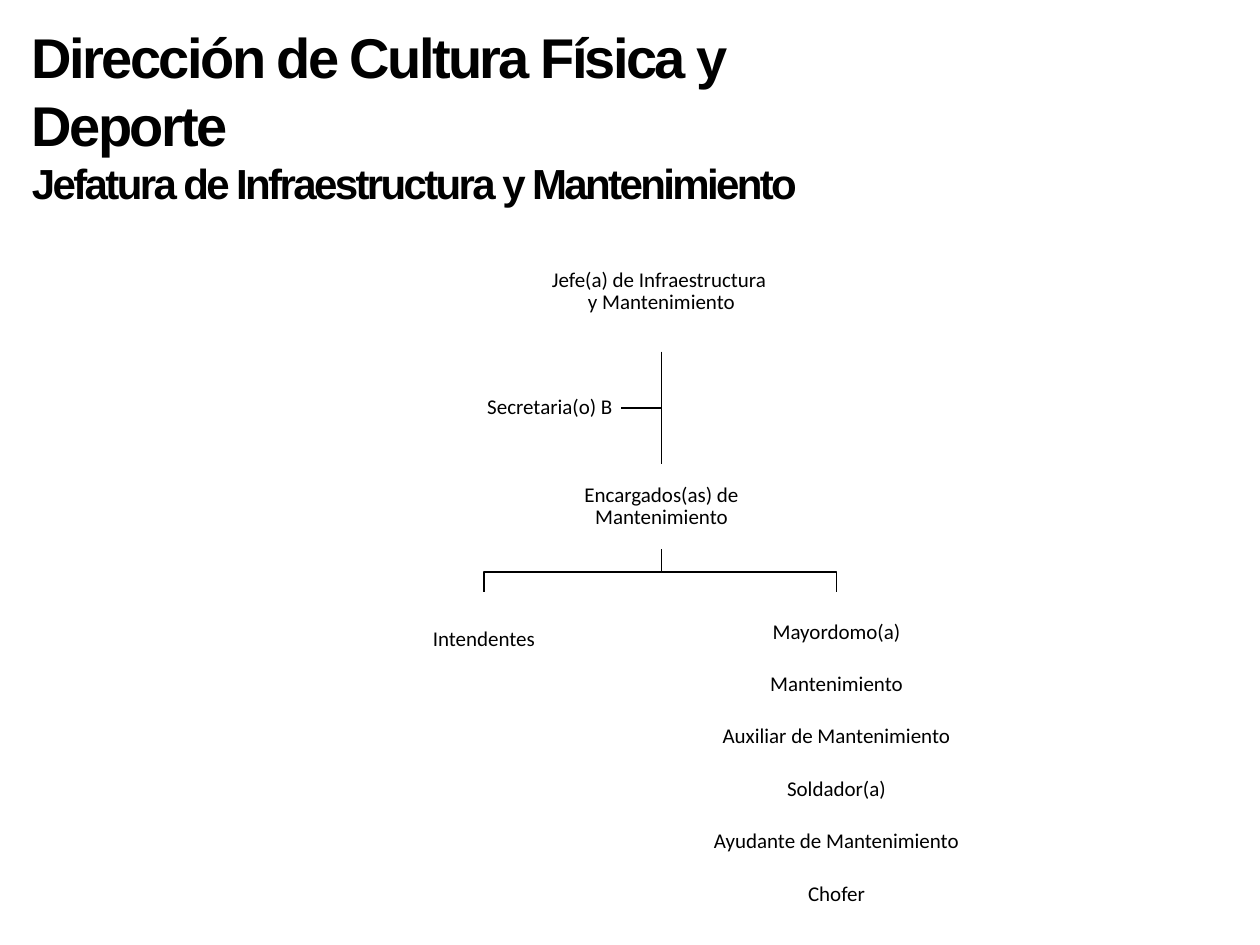
from pptx import Presentation
from pptx.dml.color import RGBColor
from pptx.enum.shapes import MSO_CONNECTOR as CONNECTOR, MSO_SHAPE as SHAPE
from pptx.enum.text import MSO_ANCHOR as ANCHOR, MSO_AUTO_SIZE as AUTO_SIZE, PP_ALIGN as ALIGN
from pptx.oxml.ns import qn
from pptx.util import Pt


def color(hex_code):
    return RGBColor.from_string(hex_code)


BLACK, WHITE = "000000", "FFFFFF"

prs = Presentation()
prs.slide_width, prs.slide_height = Pt(720), Pt(540)
slide = prs.slides.add_slide(prs.slide_layouts[5])

# Heading
title = slide.shapes.title
title.left, title.top, title.width, title.height = Pt(11), Pt(9.5), Pt(498), Pt(114)
heading = title.text_frame
heading.text = "Dirección de Cultura Física y Deporte\nJefatura de Infraestructura y Mantenimiento"
heading.word_wrap = True
heading.auto_size = AUTO_SIZE.SHAPE_TO_FIT_TEXT
heading.vertical_anchor = ANCHOR.TOP
for paragraph, size in zip(heading.paragraphs, (32, 24)):
    paragraph.alignment = ALIGN.LEFT
    for run in paragraph.runs:
        run.font.name = "Arial"
        run.font.size = Pt(size)
        run.font.bold = True
        run.font.color.rgb = color(BLACK)
        run._r.get_or_add_rPr().set("spc", "-150")

# Positions: left, top, width, height, fill, entries
positions = [
    (307, 132.5, 142, 68.5, None, ["Jefe(a) de Infraestructura \vy Mantenimiento"]),
    (325, 265, 106, 49, WHITE, ["Encargados(as) de Mantenimiento"]),
    (187.5, 338, 178, 55, WHITE, ["Intendentes"]),
    (389, 338, 178, 196.5, WHITE, [
        "Mayordomo(a)", "Mantenimiento", "Auxiliar de Mantenimiento",
        "Soldador(a)", "Ayudante de Mantenimiento", "Chofer"]),
    (273.5, 214.5, 81.5, 37, WHITE, ["Secretaria(o) B"]),
]
boxes = []
for left, top, width, height, fill, entries in positions:
    box = slide.shapes.add_shape(SHAPE.RECTANGLE, Pt(left), Pt(top), Pt(width), Pt(height))
    box.shadow.inherit = False
    box.line.fill.background()
    if fill:
        box.fill.solid()
        box.fill.fore_color.rgb = color(fill)
    else:
        box.fill.background()
    frame = box.text_frame
    frame.text = "\n".join(entries)
    frame.word_wrap = True
    frame.vertical_anchor = ANCHOR.MIDDLE
    frame.margin_left = frame.margin_right = frame.margin_top = frame.margin_bottom = Pt(0.6)
    for i, paragraph in enumerate(frame.paragraphs):
        paragraph.alignment = ALIGN.CENTER
        paragraph.line_spacing = 0.9
        paragraph.space_before = Pt(17 if i else 0)
        for run in paragraph.runs:
            run.font.name = "Calibri"
            run.font.size = Pt(12)
            run.font.color.rgb = color(BLACK)
    boxes.append(box)
chief, supervisors, janitors, crew, secretary = boxes

# Trunk from the chief to the supervisors
trunk = slide.shapes.add_connector(CONNECTOR.STRAIGHT, 0, 0, 0, 0)
trunk.begin_connect(chief, 2)
trunk.end_connect(supervisors, 0)
trunk.line.color.rgb = color(BLACK)
trunk.line.width = Pt(1)
trunk._element.spPr.get_or_add_effectLst() if hasattr(
    trunk._element.spPr, "get_or_add_effectLst") else trunk._element.spPr.append(
    trunk._element.spPr.makeelement(qn("a:effectLst"), {}))

# Angled branches
axis, fork = 378, 327
branches = [
    [(axis, 201), (axis, 233), (355, 233)],
    [(axis, 314), (axis, fork), (276.5, fork), (276.5, 338)],
    [(axis, 314), (axis, fork), (478, fork), (478, 338)],
]
for corners in branches:
    start, *others = [(Pt(x), Pt(y)) for x, y in corners]
    builder = slide.shapes.build_freeform(*start)
    builder.add_line_segments(others, close=False)
    branch = builder.convert_to_shape()
    branch.shadow.inherit = False
    branch.fill.background()
    branch.line.color.rgb = color(BLACK)
    branch.line.width = Pt(1)

prs.save("out.pptx")
